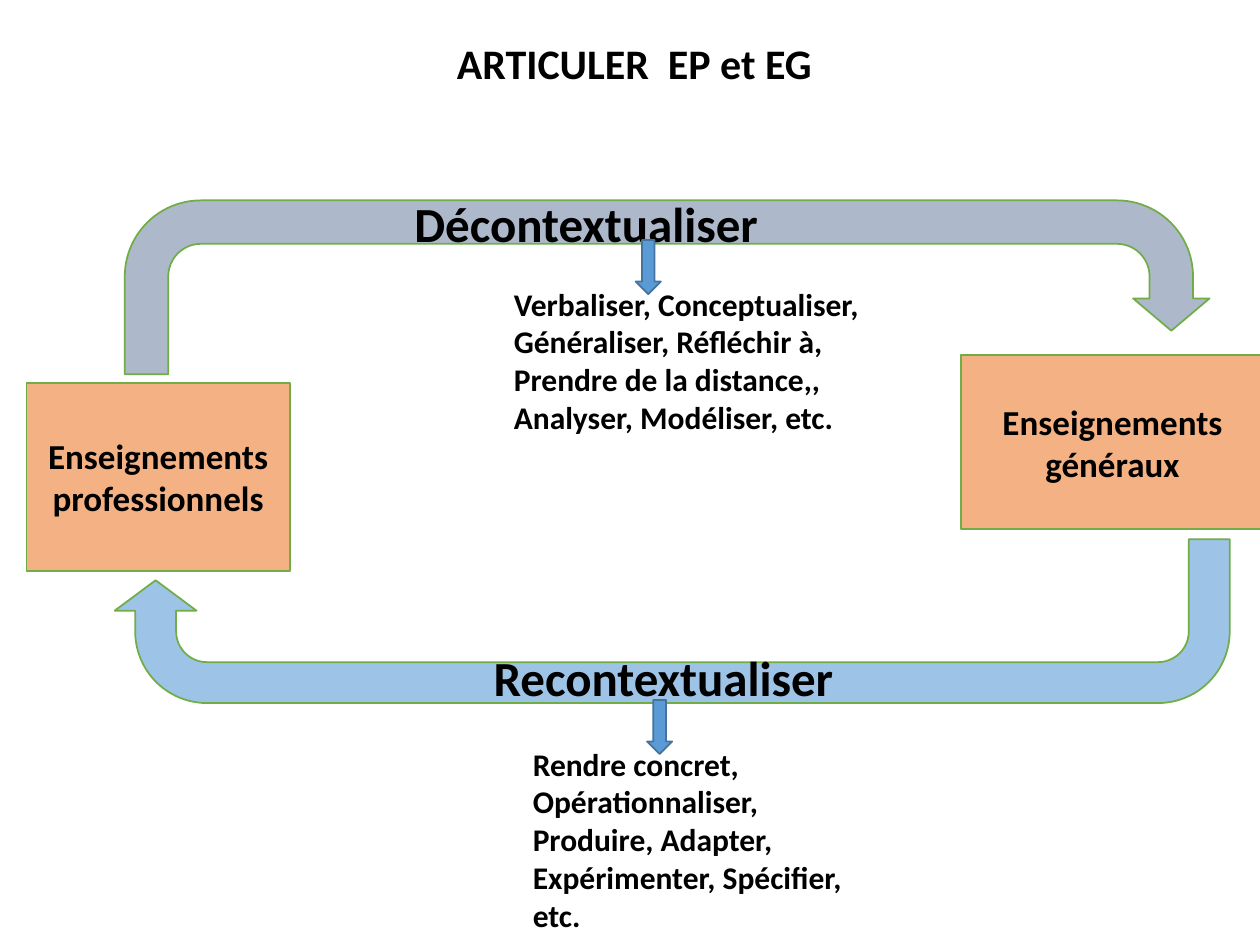
from dataclasses import dataclass

from pptx import Presentation
from pptx import util as u
from pptx.dml.color import RGBColor
from pptx.enum import shapes, text
from pptx.util import Inches


@dataclass(frozen=True)
class Theme:
    font: str = "Calibri"
    ink: str = "000000"
    box: str = "F4B183"
    up: str = "ADB9CA"
    down: str = "9DC3E6"
    outline: str = "70AD47"
    pointer: str = "5B9BD5"
    pointer_line: str = "43739E"
    title: int = 24
    label: int = 28
    subject: int = 20
    body: int = 18


theme = Theme()
deck = Presentation()
deck.slide_width, deck.slide_height = Inches(10), Inches(7.5)
page = deck.slides.add_slide(deck.slide_layouts[6])


def write(box, content, size, align=text.PP_ALIGN.LEFT, anchor=text.MSO_ANCHOR.TOP):
    frame = box.text_frame
    frame.word_wrap = True
    frame.vertical_anchor = anchor
    for number, line in enumerate(content.split("\n")):
        para = frame.add_paragraph() if number else frame.paragraphs[0]
        para.alignment = align
        span = para.add_run()
        span.text = line
        span.font.name, span.font.size, span.font.bold = theme.font, u.Pt(size), True
        span.font.color.rgb = RGBColor.from_string(theme.ink)
    return frame


def draw(kind, place, fill, line=theme.outline, rotation=0):
    shape = page.shapes.add_shape(kind, *map(Inches, place))
    shape.shadow.inherit = False
    shape.fill.solid()
    shape.fill.fore_color.rgb = RGBColor.from_string(fill)
    shape.line.color.rgb = RGBColor.from_string(line)
    shape.line.width = u.Pt(1)
    shape.rotation = rotation
    return shape


# Title
title = page.shapes.add_textbox(*map(Inches, (0.43, 0.13, 9.21, 1.02)))
frame = write(title, "ARTICULER  EP et EG", theme.title,
              text.PP_ALIGN.CENTER, text.MSO_ANCHOR.BOTTOM)
frame.margin_bottom = Inches(0.45)
frame.paragraphs[0].line_spacing = 0.9

# The two kinds of teaching
for content, place in (
    ("Enseignements\ngénéraux", (7.63, 2.82, 2.4, 1.38)),
    ("Enseignements professionnels", (0.21, 3.04, 2.09, 1.49)),
):
    subject = draw(shapes.MSO_SHAPE.RECTANGLE, place, theme.box)
    write(subject, content, theme.subject, text.PP_ALIGN.CENTER, text.MSO_ANCHOR.MIDDLE)

# Cycle arrows between them
for place, fill, rotation, head in (
    ((0.99, 1.59, 8.61, 1.38), theme.up, 0, 0.22),
    ((0.91, 4.28, 8.85, 1.3), theme.down, 180, 0.25),
):
    cycle = draw(shapes.MSO_SHAPE.U_TURN_ARROW, place, fill, rotation=rotation)
    for index, value in enumerate((0.25, head, 0.186, 0.438, 0.75)):
        cycle.adjustments[index] = value

# Names of the cycle arrows and the actions they stand for
for content, place, size in (
    ("Verbaliser, Conceptualiser, Généraliser, Réfléchir à, Prendre de la distance,, "
     "Analyser, Modéliser, etc.", (3.98, 2.21, 3.04, 1.31), theme.body),
    ("Décontextualiser", (3.19, 1.49, 4.88, 0.57), theme.label),
    ("Recontextualiser", (3.82, 5.09, 3.46, 0.57), theme.label),
    ("Rendre concret, Opérationnaliser, Produire, Adapter, Expérimenter, Spécifier, etc.",
     (4.13, 5.86, 2.99, 1.62), theme.body),
):
    write(page.shapes.add_textbox(*map(Inches, place)), content, size)

# Pointers from each name to its actions
for left, top in ((4.93, 2.02), (5.02, 5.67)):
    draw(shapes.MSO_SHAPE.RIGHT_ARROW, (left, top, 0.43, 0.2),
         theme.pointer, theme.pointer_line, rotation=90)

deck.save("out.pptx")
